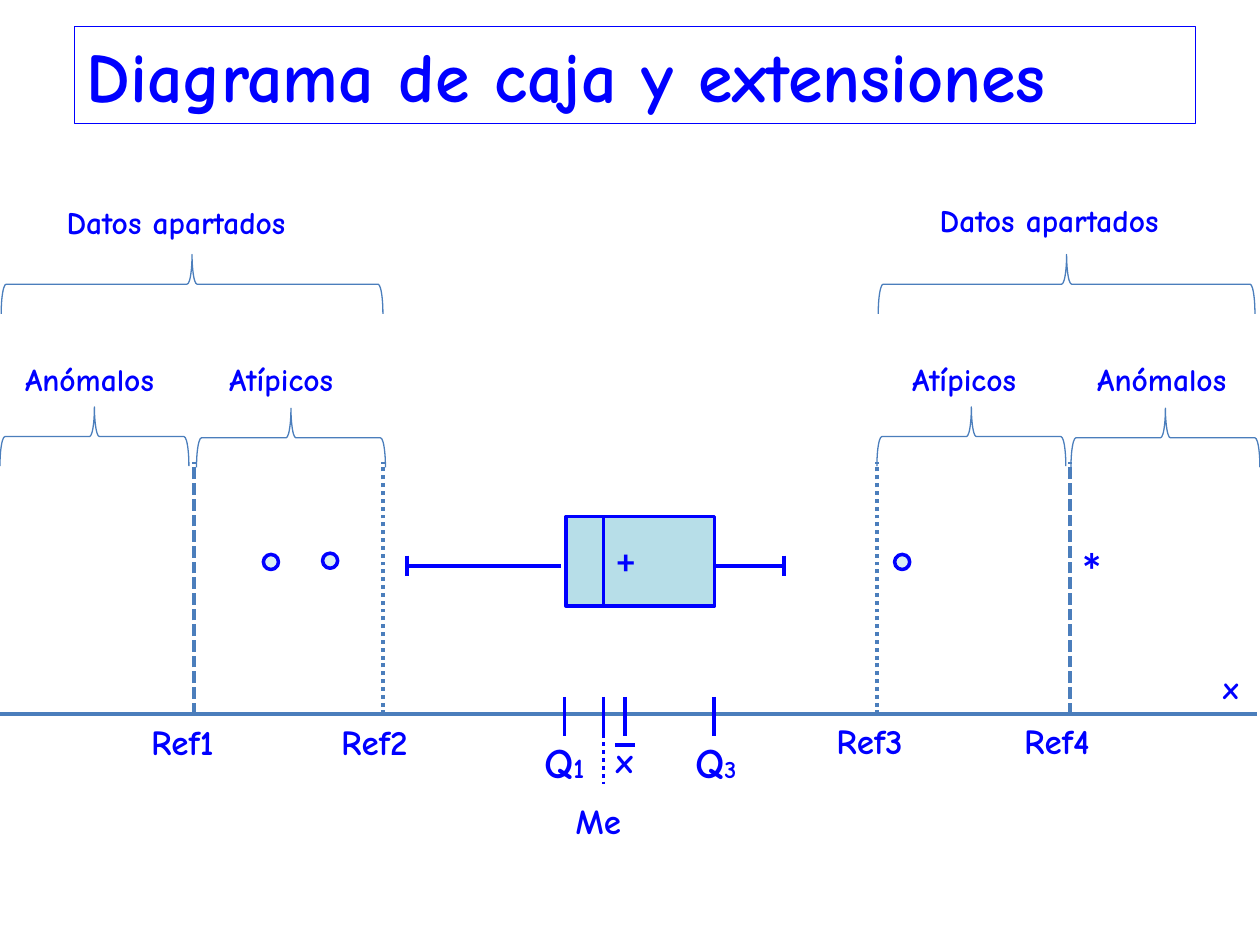
from pptx import Presentation
from pptx.dml.color import RGBColor
from pptx.enum.dml import MSO_LINE
from pptx.enum.shapes import MSO_CONNECTOR, MSO_SHAPE
from pptx.enum.text import MSO_ANCHOR, MSO_AUTO_SIZE, PP_ALIGN
from pptx.oxml.ns import qn
from pptx.util import Inches, Pt
from lxml.etree import SubElement

COLORS = {"ink": "0000FF", "axis": "4B7EBC", "box": "B7DEE8", "dot": "DBEEF4"}
FONT, SYMBOL_FONT = "Comic Neue", "Calibri"
DASH, DOTS = MSO_LINE.SQUARE_DOT, MSO_LINE.ROUND_DOT  # sysDash is set below
DASH_NAMES = {"dash": "sysDash", "dots": "sysDot"}

TITLE = "Diagrama de caja y extensiones"
AXIS_Y = 5.67
Q1, MEDIAN, MEAN, Q3 = 4.48, 4.79, 4.96, 5.67
BOX_TOP, BOX_H = 4.1, 0.71
WHISKER_Y, CAP_H = 4.49, 0.16
WHISKERS = [(4.45, 3.23), (Q3, 6.22)]  # from the box, to the cap
REFERENCES = [(1.54, "dash"), (3.04, "dots"), (6.96, "dots"), (8.49, "dash")]
OUTLIERS = [(2.09, 4.4), (2.56, 4.39), (7.1, 4.4)]
OUTLIER_SIZE = 0.12
BRACE_H = 0.47
BRACES = [  # left, top, span
    (6.96, 3.23, 1.5), (8.5, 3.24, 1.5), (0, 3.23, 1.5), (1.56, 3.24, 1.5),
    (0.01, 2.02, 3.03), (6.97, 2.02, 2.99),
]
LABELS = [  # text, left, top, width, height, size
    ("Datos apartados", 0.43, 1.56, 2.21, 0.4, 18),
    ("Datos apartados", 7.36, 1.55, 2.21, 0.4, 18),
    ("Anómalos", 0.1, 2.81, 1.31, 0.4, 18),
    ("Atípicos", 1.72, 2.81, 1.17, 0.4, 18),
    ("Atípicos", 7.14, 2.81, 1.17, 0.4, 18),
    ("Anómalos", 8.61, 2.81, 1.31, 0.4, 18),
    ("Ref1", 1.1, 5.67, 0.85, 0.44, 20),
    ("Ref2", 2.61, 5.67, 0.85, 0.44, 20),
    ("Ref3", 6.54, 5.66, 0.85, 0.44, 20),
    ("Ref4", 8.03, 5.66, 0.85, 0.44, 20),
    ("Me", 4.47, 6.3, 0.61, 0.44, 20),
    ("x", 4.79, 5.81, 0.37, 0.44, 20),
    ("x", 9.61, 5.25, 0.35, 0.4, 18),
]
SYMBOLS = [("+", 4.8, 4.23, 0.34, 0.44, 20), ("*", 8.47, 4.23, 0.4, 0.57, 28)]
QUARTILES = [("1", 4.22, 16), ("3", 5.42, 14)]  # index, left, index size


def rgb(name):
    return RGBColor.from_string(COLORS[name])


def add_line(s, x1, y1, x2, y2, color="ink", dash=None):
    c = s.shapes.add_connector(
        MSO_CONNECTOR.STRAIGHT, Inches(x1), Inches(y1), Inches(x2), Inches(y2))
    c.line.color.rgb = rgb(color)
    c.line.width = Pt(2.25)
    if dash:
        c.line.dash_style = MSO_LINE.DASH
        c.line._ln.find(qn("a:prstDash")).set("val", DASH_NAMES[dash])
    SubElement(c._element.spPr, qn("a:effectLst"))


def add_shape(s, kind, x, y, w, h, fill=None, line="ink", width=2):
    sp = s.shapes.add_shape(kind, Inches(x), Inches(y), Inches(w), Inches(h))
    sp.shadow.inherit = False
    if fill:
        sp.fill.solid()
        sp.fill.fore_color.rgb = rgb(fill)
    else:
        sp.fill.background()
    sp.line.color.rgb = rgb(line)
    sp.line.width = Pt(width)
    return sp


def add_brace(s, left, top, span):
    """Brace over a horizontal span, its point upwards."""
    x, y = left + (span - BRACE_H) / 2, top + (BRACE_H - span) / 2
    sp = add_shape(s, MSO_SHAPE.RIGHT_BRACE, x, y, BRACE_H, span, line="axis", width=0.75)
    sp.rotation = 270


def style(p, size, font=FONT):
    p.font.size, p.font.name, p.font.bold = Pt(size), font, True
    p.font.color.rgb = rgb("ink")


def add_label(s, text, x, y, w, h, size, font=FONT):
    tb = s.shapes.add_textbox(Inches(x), Inches(y), Inches(w), Inches(h))
    tf = tb.text_frame
    tf.word_wrap = False
    tf.auto_size = MSO_AUTO_SIZE.SHAPE_TO_FIT_TEXT
    p = tf.paragraphs[0]
    p.add_run().text = text
    style(p, size, font)
    return p


def add_title(s):
    sp = add_shape(s, MSO_SHAPE.RECTANGLE, 0.59, 0.21, 8.9, 0.77, width=0.75)
    tf = sp.text_frame
    tf.word_wrap = True
    tf.vertical_anchor = MSO_ANCHOR.TOP
    p = tf.paragraphs[0]
    p.text, p.alignment = TITLE, PP_ALIGN.LEFT
    style(p, 40)


def add_box_plot(s):
    add_shape(s, MSO_SHAPE.RECTANGLE, Q1 + 0.01, BOX_TOP, 1.18, BOX_H, "box")
    add_line(s, MEDIAN, BOX_TOP, MEDIAN, BOX_TOP + BOX_H)
    for start, end in WHISKERS:
        add_line(s, start, WHISKER_Y, end, WHISKER_Y)
        add_line(s, end, WHISKER_Y - CAP_H / 2, end, WHISKER_Y + CAP_H / 2)
    for x, y in OUTLIERS:
        add_shape(s, MSO_SHAPE.OVAL, x, y, OUTLIER_SIZE, OUTLIER_SIZE, "dot")


def add_axis(s):
    add_line(s, -0.02, AXIS_Y, 9.98, AXIS_Y, "axis")
    for x, dash in REFERENCES:
        add_line(s, x, AXIS_Y, x, AXIS_Y - 2, "axis", dash)
    for x in (Q1, MEDIAN, MEAN, Q3):
        add_line(s, x, 5.53, x, 5.84)
    add_line(s, MEDIAN, 5.83, MEDIAN, 6.22, dash="dots")
    add_line(s, MEAN - 0.08, 5.91, MEAN + 0.08, 5.91)  # bar over the mean's x


def main():
    prs = Presentation()
    prs.slide_width, prs.slide_height = Inches(10), Inches(7.5)
    s = prs.slides.add_slide(prs.slide_layouts[6])
    add_axis(s)
    add_box_plot(s)
    for brace in BRACES:
        add_brace(s, *brace)
    for label in LABELS:
        add_label(s, *label)
    for symbol in SYMBOLS:
        add_label(s, *symbol, font=SYMBOL_FONT)
    for index, x, size in QUARTILES:
        r = add_label(s, "Q", x, 5.8, 0.63, 0.5, 24).add_run()
        r.text, r.font.size = index, Pt(size)
    add_title(s)
    prs.save("out.pptx")


if __name__ == "__main__":
    main()
